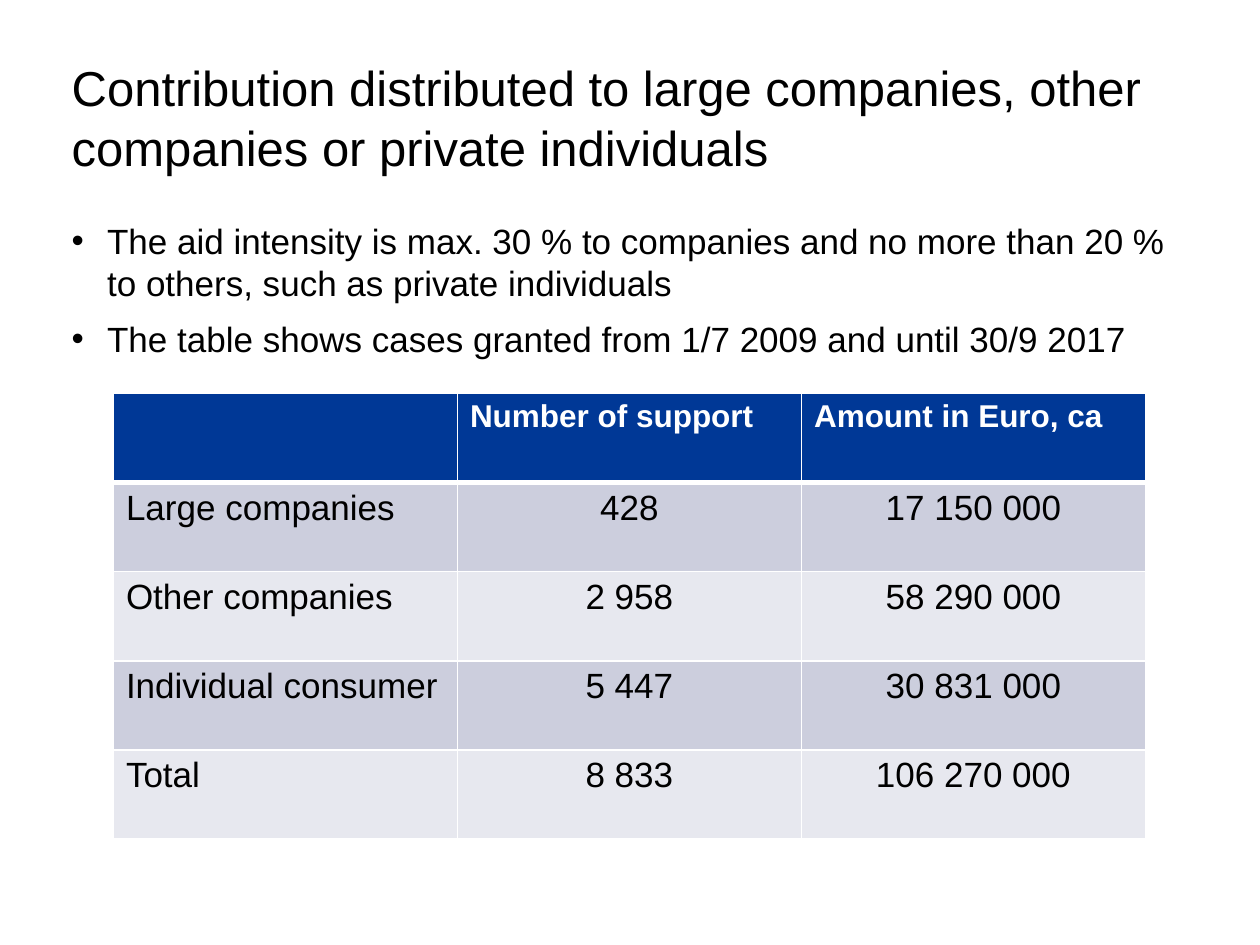
from lxml import etree
from pptx import Presentation
from pptx.dml.color import RGBColor
from pptx.enum.text import PP_ALIGN
from pptx.oxml.ns import qn
from pptx.util import Pt

LEFT, CENTER = PP_ALIGN.LEFT, PP_ALIGN.CENTER
BLACK = RGBColor(0x00, 0x00, 0x00)
WHITE = RGBColor(0xFF, 0xFF, 0xFF)
BLUE = RGBColor(0x00, 0x38, 0x96)
BANDS = RGBColor(0xCC, 0xCE, 0xDD), RGBColor(0xE7, 0xE8, 0xEF)

TITLE = ("Contribution distributed to large companies, other "
         "companies or private individuals")
POINTS = [
    "The aid intensity is max. 30 % to companies and no more than 20 % "
    "to others, such as private individuals",
    "The table shows cases granted from 1/7 2009 and until 30/9 2017",
]
ROWS = [
    ("", "Number of support", "Amount in Euro, ca"),
    ("Large companies", "428", "17 150 000"),
    ("Other companies", "2 958", "58 290 000"),
    ("Individual consumer", "5 447", "30 831 000"),
    ("Total", "8 833", "106 270 000"),
]
EDGE, WIDTH = 41, 638
INDENT = 20.2
COL, ROW = 196.6, 51

HEAD = {"size": Pt(18), "bold": True}
BODY = {"size": Pt(20), "bold": False}


def style(para, color, font, **layout):
    for name, value in layout.items():
        setattr(para, name, value)
    for name, value in {"name": "Arial", **font}.items():
        setattr(para.font, name, value)
    para.font.color.rgb = color


def add_text(slide, top, height, lines):
    """Add a text box without margins and return its paragraphs."""
    box = slide.shapes.add_textbox(Pt(EDGE), Pt(top), Pt(WIDTH), Pt(height))
    frame = box.text_frame
    frame.word_wrap = True
    for side in ("left", "top", "right", "bottom"):
        setattr(frame, f"margin_{side}", 0)
    frame.text = "\n".join(lines)
    return frame.paragraphs


def add_bullet(para):
    props = para._p.get_or_add_pPr()
    props.set("marL", str(Pt(INDENT)))
    props.set("indent", str(-Pt(INDENT)))
    etree.SubElement(props, qn("a:buFont")).set("typeface", "Arial")
    etree.SubElement(props, qn("a:buChar")).set("char", "•")


def add_borders(cell, widths):
    """Draw white cell borders; they must precede the fill in the XML."""
    props = cell._tc.get_or_add_tcPr()
    for spot, (side, width) in enumerate(widths.items()):
        line = etree.Element(qn(f"a:ln{side}"), w=str(Pt(width)))
        fill = etree.SubElement(line, qn("a:solidFill"))
        etree.SubElement(fill, qn("a:srgbClr")).set("val", str(WHITE))
        props.insert(spot, line)


def add_grid(slide, left, top):
    count, cols = len(ROWS), len(ROWS[0])
    table = slide.shapes.add_table(count, cols, Pt(left), Pt(top),
                                   Pt(COL * cols), Pt(ROW * count)).table
    for col in table.columns:
        col.width = Pt(COL)
    for r, row in enumerate(ROWS):
        table.rows[r].height = Pt(ROW)
        for c, text in enumerate(row):
            cell = table.cell(r, c)
            cell.text = text
            cell.fill.solid()
            cell.fill.fore_color.rgb = BANDS[(r - 1) % 2] if r else BLUE
            add_borders(cell, {"L": 1, "R": 1, "T": 3 if r == 1 else 1,
                               "B": 1 if r else 3})
            style(cell.text_frame.paragraphs[0], BLACK if r else WHITE,
                  BODY if r else HEAD,
                  alignment=CENTER if r and c else LEFT)


def main():
    deck = Presentation()
    deck.slide_width, deck.slide_height = Pt(720), Pt(540)
    slide = deck.slides.add_slide(deck.slide_layouts[6])

    title = add_text(slide, 31.7, 82, [TITLE])[0]
    style(title, BLACK, {"size": Pt(28)}, line_spacing=Pt(34.5))

    for i, para in enumerate(add_text(slide, 125.3, 366, POINTS)):
        add_bullet(para)
        style(para, BLACK, BODY, line_spacing=Pt(24),
              space_before=Pt(8 if i else 0))

    add_grid(slide, 64.8, 224.6)
    deck.save("out.pptx")


if __name__ == "__main__":
    main()
